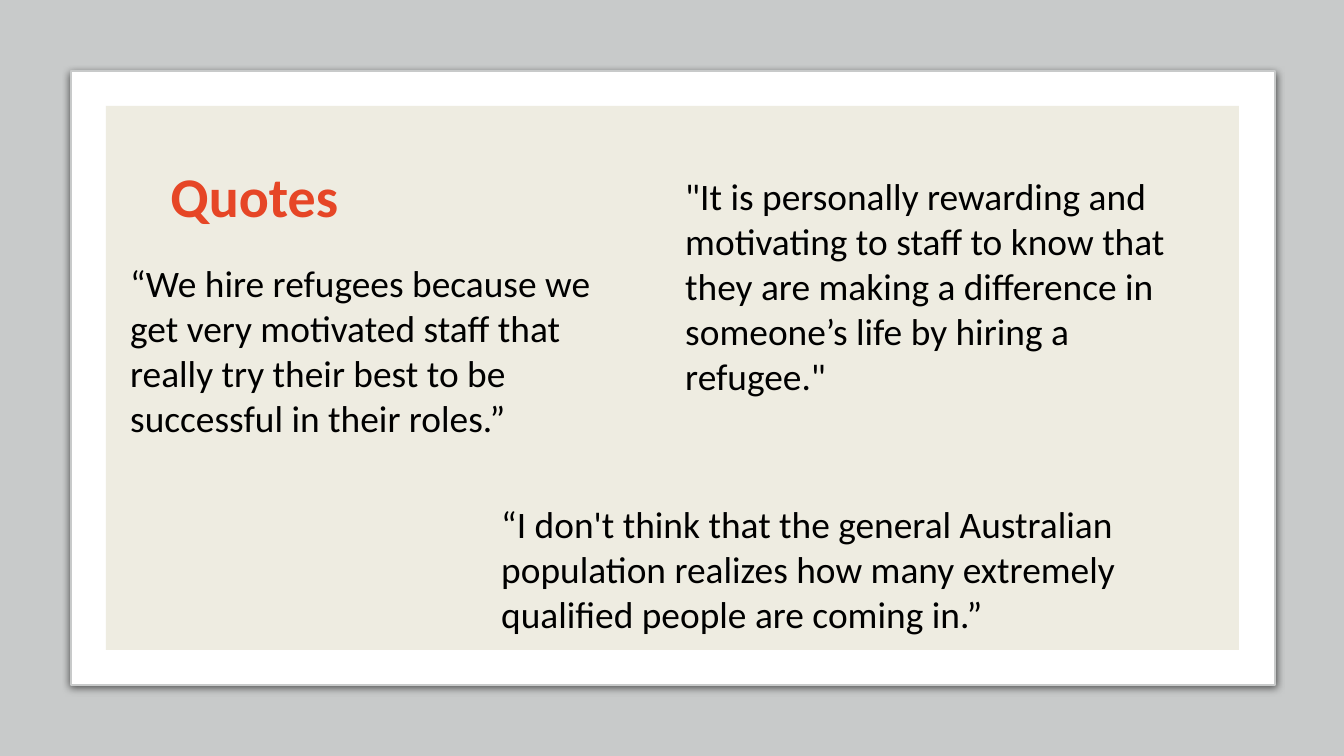
"""Build a slide of three quotes on a framed panel."""
from dataclasses import dataclass
from typing import Optional

from lxml import etree
from pptx import Presentation
from pptx import util as u
from pptx.dml.color import RGBColor
from pptx.enum import shapes, text
from pptx.oxml.ns import qn

EMU_PER_PX = 914400 / 134.4


@dataclass(frozen=True)
class Theme:
    font: str = "Calibri"
    backdrop: str = "C8CACA"
    frame: str = "FFFFFF"
    panel: str = "EEECE1"
    accent: str = "E64626"
    ink: str = "000000"
    title_size: int = 30
    quote_size: int = 20


@dataclass(frozen=True)
class Area:
    left: int
    top: int
    width: int
    height: int

    def emu(self) -> list[int]:
        return [px(n) for n in (self.left, self.top, self.width, self.height)]


@dataclass(frozen=True)
class Panel:
    area: Area
    fill: str
    preset: int = shapes.MSO_SHAPE.RECTANGLE
    line: Optional[str] = None


@dataclass(frozen=True)
class Quote:
    area: Area
    words: str


THEME = Theme()
SLIDE = Area(0, 0, 1344, 756)
TITLE = Area(157, 138, 1032, 114)
BACKDROP = Panel(SLIDE, THEME.backdrop)
FRAME = Panel(Area(71, 71, 1204, 614), THEME.frame,
              shapes.MSO_SHAPE.ROUNDED_RECTANGLE, THEME.backdrop)
INNER = Panel(Area(106, 106, 1133, 544), THEME.panel)
QUOTES = [
    Quote(Area(117, 254, 494, 297),
          "“We hire refugees because we get very motivated staff that "
          "really try their best to be successful in their roles.”"),
    Quote(Area(672, 167, 555, 297),
          '"It is personally rewarding and motivating to staff to know that '
          'they are making a difference in someone’s life by hiring a refugee."'),
    Quote(Area(488, 495, 741, 149),
          "“I don't think that the general Australian population realizes "
          "how many extremely qualified people are coming in.”"),
]


def px(count: int) -> int:
    return round(count * EMU_PER_PX)


def draw_panel(slide, panel: Panel):
    box = slide.shapes.add_shape(panel.preset, *panel.area.emu())
    box.shadow.inherit = False
    box.fill.solid()
    box.fill.fore_color.rgb = RGBColor.from_string(panel.fill)
    if panel.line:
        box.line.color.rgb = RGBColor.from_string(panel.line)
        box.line.width = u.Pt(0.75)
    else:
        box.line.fill.background()
    return box


def add_shadow(box) -> None:
    effects = box.element.spPr.find(qn("a:effectLst"))
    shadow = etree.SubElement(effects, qn("a:outerShdw"), blurRad=str(u.Pt(4.5)),
                              dist=str(u.Pt(1.5)), dir="5400000", rotWithShape="0")
    color = etree.SubElement(shadow, qn("a:srgbClr"), val=THEME.ink)
    etree.SubElement(color, qn("a:alpha"), val="63000")


def write(box, words: str, size: int, color: str, bold: bool = False) -> None:
    frame = box.text_frame
    frame.text = words
    frame.word_wrap = True
    frame.auto_size = text.MSO_AUTO_SIZE.NONE
    para = frame.paragraphs[0]
    para.alignment = text.PP_ALIGN.LEFT
    for span in para.runs:
        span.font.name = THEME.font
        span.font.size = u.Pt(size)
        span.font.bold = bold
        span.font.color.rgb = RGBColor.from_string(color)


def draw_title(slide, words: str) -> None:
    title = slide.shapes.title
    title.left, title.top, title.width, title.height = TITLE.emu()
    write(title, words, THEME.title_size, THEME.accent, bold=True)
    title.text_frame.vertical_anchor = text.MSO_ANCHOR.MIDDLE
    slide.shapes.element.append(title.element)


def draw_quote(slide, quote: Quote) -> None:
    box = slide.shapes.add_textbox(*quote.area.emu())
    write(box, quote.words, THEME.quote_size, THEME.ink)


def main() -> None:
    deck = Presentation()
    deck.slide_width, deck.slide_height = px(SLIDE.width), px(SLIDE.height)
    page = deck.slides.add_slide(deck.slide_layouts[5])
    draw_panel(page, BACKDROP)
    frame = draw_panel(page, FRAME)
    frame.adjustments[0] = 0
    add_shadow(frame)
    draw_panel(page, INNER)
    draw_title(page, "Quotes")
    for quote in QUOTES:
        draw_quote(page, quote)
    deck.save("out.pptx")


if __name__ == "__main__":
    main()
